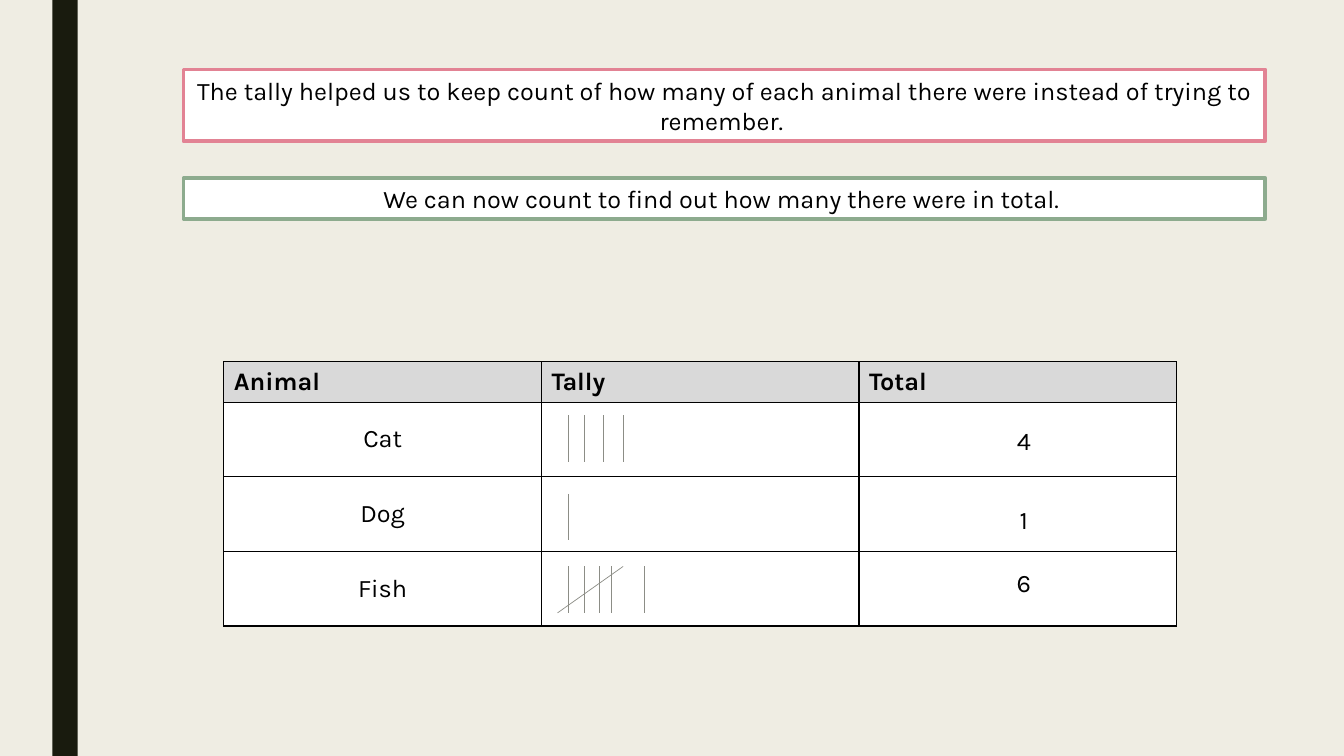
from dataclasses import dataclass

from pptx import Presentation
from pptx.dml.color import RGBColor
from pptx.enum.shapes import MSO_CONNECTOR, MSO_SHAPE
from pptx.enum.text import MSO_ANCHOR, PP_ALIGN
from pptx.oxml.ns import qn
from pptx.slide import Slide
from pptx.table import _Cell as Cell
from pptx.text.text import TextFrame
from pptx.util import Inches, Pt
from lxml.etree import SubElement

BLACK = RGBColor(0x00, 0x00, 0x00)
WHITE = RGBColor(0xFF, 0xFF, 0xFF)
CREAM = RGBColor(0xEF, 0xED, 0xE3)
DARK = RGBColor(0x19, 0x1B, 0x0E)
HEADER_GREY = RGBColor(0xD9, 0xD9, 0xD9)
TALLY_GREY = RGBColor(0x8C, 0x8D, 0x86)
PINK = RGBColor(0xE2, 0x83, 0x94)
GREEN = RGBColor(0x8D, 0xAB, 0x8E)

FONT = "Karla"
HEADINGS = ("Animal", "Tally", "Total")
COLUMN_WIDTH = 3.15
HEADER_HEIGHT = 0.4
ROW_HEIGHT = 0.74
MARK_HEIGHT = 0.46


@dataclass
class Message:
    text: str
    top: float
    height: float
    border: RGBColor


@dataclass
class AnimalRow:
    """One animal, with the places of its upright marks and its total."""
    name: str
    marks: tuple[float, ...]
    marks_top: float
    total: int
    total_top: float


MESSAGES = (
    Message("The tally helped us to keep count of how many of each animal "
            "there were instead of trying to remember. ", 0.69, 0.71, PINK),
    Message("We can now count to find out how many there were in total. ",
            1.77, 0.4, GREEN),
)
ANIMALS = (
    AnimalRow("Cat", (5.64, 5.8, 5.98, 6.18), 4.12, 4, 4.17),
    AnimalRow("Dog", (5.64,), 4.9, 1, 4.95),
    AnimalRow("Fish", (5.64, 5.8, 5.94, 6.06, 6.39), 5.62, 6, 5.58),
)


def set_text(tf: TextFrame, text: str, align: PP_ALIGN = PP_ALIGN.CENTER,
             bold: bool = False) -> None:
    tf.word_wrap = True
    tf.text = text
    p = tf.paragraphs[0]
    p.alignment = align
    for r in p.runs:
        r.font.name = FONT
        r.font.size = Pt(18)
        r.font.bold = bold
        r.font.color.rgb = BLACK


def add_rect(slide: Slide, left: float, top: float, width: float,
             height: float, fill: RGBColor, border: RGBColor | None = None) -> TextFrame:
    sp = slide.shapes.add_shape(MSO_SHAPE.RECTANGLE, Inches(left), Inches(top),
                                Inches(width), Inches(height))
    sp.shadow.inherit = False
    sp.fill.solid()
    sp.fill.fore_color.rgb = fill
    if border is None:
        sp.line.fill.background()
    else:
        sp.line.color.rgb = border
        sp.line.width = Pt(2.75)
    return sp.text_frame


def add_mark(slide: Slide, x1: float, y1: float, x2: float, y2: float) -> None:
    line = slide.shapes.add_connector(MSO_CONNECTOR.STRAIGHT, Inches(x1),
                                      Inches(y1), Inches(x2), Inches(y2))
    line.line.color.rgb = TALLY_GREY
    line.line.width = Pt(0.5)
    SubElement(line._element.spPr, qn("a:effectLst"))


def style_cell(cell: Cell, fill: RGBColor) -> None:
    tc_pr = cell._tc.get_or_add_tcPr()
    for side in ("lnL", "lnR", "lnT", "lnB"):
        ln = SubElement(tc_pr, qn(f"a:{side}"), w=str(Pt(1)))
        SubElement(SubElement(ln, qn("a:solidFill")), qn("a:srgbClr"), val=str(BLACK))
    cell.fill.solid()
    cell.fill.fore_color.rgb = fill


def add_animal_table(slide: Slide) -> None:
    table = slide.shapes.add_table(
        len(ANIMALS) + 1, len(HEADINGS), Inches(2.22), Inches(3.59),
        Inches(COLUMN_WIDTH * len(HEADINGS)),
        Inches(HEADER_HEIGHT + ROW_HEIGHT * len(ANIMALS))).table
    for column in table.columns:
        column.width = Inches(COLUMN_WIDTH)
    for i, row in enumerate(table.rows):
        row.height = Inches(ROW_HEIGHT if i else HEADER_HEIGHT)
        for cell in row.cells:
            style_cell(cell, WHITE if i else HEADER_GREY)
    for col, heading in enumerate(HEADINGS):
        set_text(table.cell(0, col).text_frame, heading, PP_ALIGN.LEFT, bold=True)
    for i, animal in enumerate(ANIMALS, start=1):
        cell = table.cell(i, 0)
        set_text(cell.text_frame, animal.name)
        cell.vertical_anchor = MSO_ANCHOR.MIDDLE


def add_tally(slide: Slide, animal: AnimalRow) -> None:
    bottom = animal.marks_top + MARK_HEIGHT
    for x in animal.marks:
        add_mark(slide, x, animal.marks_top, x, bottom)
    if animal.total >= 5:
        add_mark(slide, 6.18, animal.marks_top, 5.53, bottom)


def add_total(slide: Slide, animal: AnimalRow) -> None:
    box = slide.shapes.add_textbox(Inches(9.2), Inches(animal.total_top),
                                   Inches(1.91), Inches(0.4))
    set_text(box.text_frame, str(animal.total))


def main() -> None:
    prs = Presentation()
    prs.slide_width, prs.slide_height = Inches(13.33), Inches(7.5)
    slide = prs.slides.add_slide(prs.slide_layouts[6])
    slide.background.fill.solid()
    slide.background.fill.fore_color.rgb = CREAM

    add_rect(slide, 0.52, 0, 0.25, 7.5, DARK)
    add_animal_table(slide)
    for message in MESSAGES:
        tf = add_rect(slide, 1.82, message.top, 10.73, message.height,
                      WHITE, message.border)
        set_text(tf, message.text)
    for animal in ANIMALS:
        add_tally(slide, animal)
        add_total(slide, animal)
    prs.save("out.pptx")


if __name__ == "__main__":
    main()
